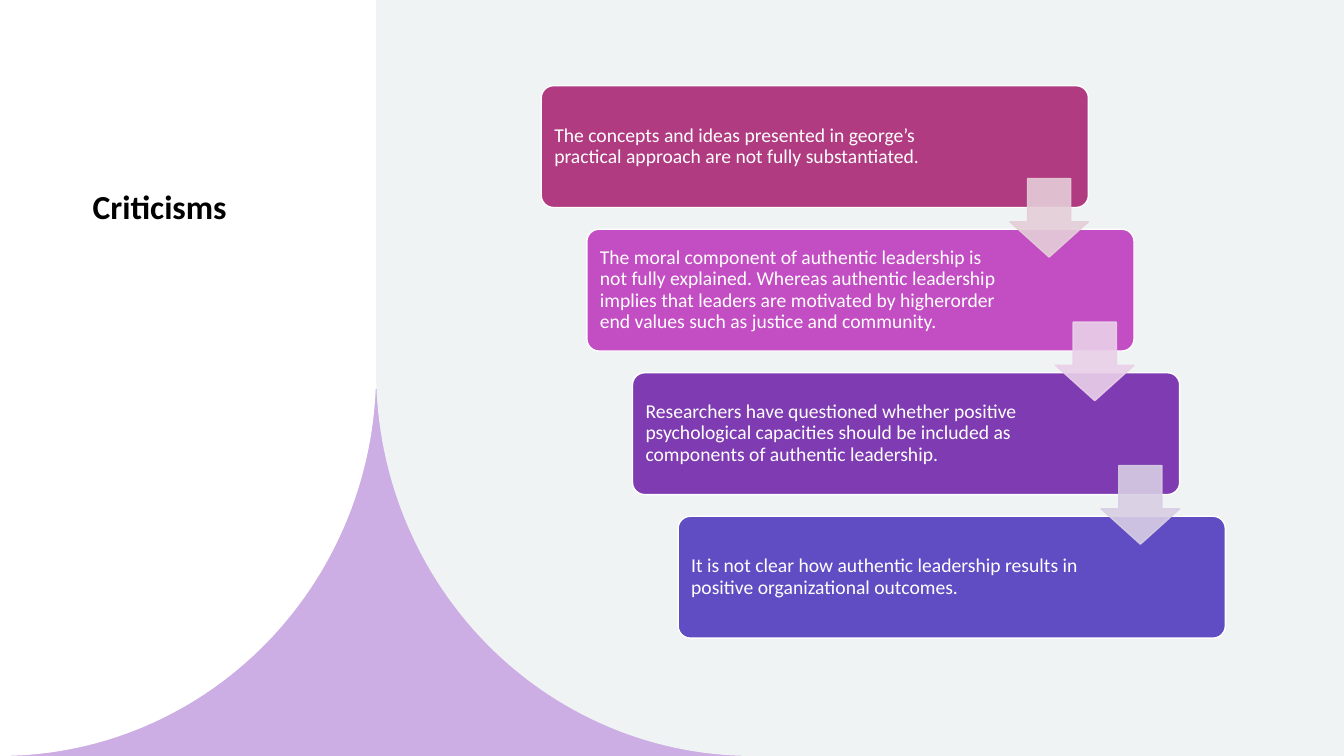
from math import cos, pi, sin

from pptx import Presentation
from pptx.dml.color import RGBColor
from pptx.enum.shapes import MSO_SHAPE
from pptx.enum.text import MSO_ANCHOR, PP_ALIGN
from pptx.oxml.ns import qn
from pptx.oxml.xmlchemy import OxmlElement
from pptx.util import Cm, Pt

RECTANGLE = MSO_SHAPE.RECTANGLE
ROUNDED = MSO_SHAPE.ROUNDED_RECTANGLE
DOWN_ARROW = MSO_SHAPE.DOWN_ARROW
TOP, MIDDLE = MSO_ANCHOR.TOP, MSO_ANCHOR.MIDDLE
LEFT = PP_ALIGN.LEFT

WHITE = RGBColor(0xFF, 0xFF, 0xFF)
BLACK = RGBColor(0x00, 0x00, 0x00)
LILAC = RGBColor(0xCC, 0xAD, 0xE4)
MIST = RGBColor(0xF0, 0xF3, 0xF3)
BOX_COLOURS = [
    RGBColor(0xB1, 0x3B, 0x81),
    RGBColor(0xC3, 0x4D, 0xC3),
    RGBColor(0x7F, 0x3B, 0xB1),
    RGBColor(0x60, 0x4D, 0xC3),
]
ARROW_COLOURS = [
    RGBColor(0xE4, 0xCE, 0xD8),
    RGBColor(0xE9, 0xD0, 0xE9),
    RGBColor(0xD8, 0xCE, 0xE4),
]

PAGE_WIDTH, PAGE_HEIGHT = 33.87, 19.05
TITLE_FONT = {"name": "Calibri", "size": Pt(24), "bold": True}
BODY_FONT = {"name": "Calibri", "size": Pt(14), "bold": False}
CRITICISMS = [
    "The concepts and ideas presented in george’s practical approach "
    "are not fully substantiated.",
    "The moral component of authentic leadership is not fully explained. "
    "Whereas authentic leadership implies that leaders are motivated by "
    "higherorder end values such as justice and community.",
    "Researchers have questioned whether positive psychological capacities "
    "should be included as components of authentic leadership.",
    "It is not clear how authentic leadership results in positive "
    "organizational outcomes.",
]


def write_text(frame, text, font, colour, spacing, anchor):
    """Put one formatted, left-aligned paragraph in a text frame."""
    frame.word_wrap = True
    frame.vertical_anchor = anchor
    para = frame.paragraphs[0]
    para.alignment = LEFT
    para.line_spacing = spacing
    span = para.add_run()
    span.text = text
    for name, value in font.items():
        setattr(span.font, name, value)
    span.font.color.rgb = colour


def paint(shape, fill, line=None):
    """Give a shape a flat fill and an optional one-point outline."""
    shape.shadow.inherit = False
    shape.fill.solid()
    shape.fill.fore_color.rgb = fill
    if line is None:
        shape.line.fill.background()
    else:
        shape.line.color.rgb = line
        shape.line.width = Pt(1)


def set_opacity(shape, percent):
    """Make the fill and outline of a shape partly transparent."""
    for colour in shape.element.spPr.iter(qn("a:srgbClr")):
        alpha = OxmlElement("a:alpha")
        alpha.set("val", str(percent * 1000))
        colour.append(alpha)


def add_curved_panel(page, box, curve_top, radius, mirrored, fill):
    """Add a panel whose inner lower corner is a quarter ellipse."""
    left, top, width, height = box
    drop = top + height - curve_top
    inner, outer, turn = left + width, left, 1
    if mirrored:
        inner, outer, turn = left, left + width, -1
    centre = inner - turn * radius
    angles = [step * pi / 120 for step in range(61)]
    arc = [(centre + turn * radius * cos(angle), curve_top + drop * sin(angle))
           for angle in angles]
    points = [(inner, top), *arc, (outer, top + height)]
    builder = page.shapes.build_freeform(Cm(outer), Cm(top))
    builder.add_line_segments([(Cm(x), Cm(y)) for x, y in points], close=True)
    paint(builder.convert_to_shape(), fill)


def add_backdrop(page, width, height):
    """Draw the lilac base and the two curved panels over it."""
    seam, curve_top = 9.48, 9.37
    base = page.shapes.add_shape(
        RECTANGLE, 0, Cm(9.8), Cm(18.72), Cm(height - 9.8))
    paint(base, LILAC)
    add_curved_panel(
        page, (0, 0, seam, height), curve_top, seam, False, WHITE)
    add_curved_panel(
        page, (seam, 0, width - seam, height), curve_top, seam, True, MIST)


def add_title(page, box, text):
    """Place the title placeholder in front of the backdrop."""
    title = page.shapes.title
    title.left, title.top, title.width, title.height = map(Cm, box)
    write_text(title.text_frame, text, TITLE_FONT, BLACK, 1.1, TOP)
    page.shapes.element.append(title.element)


def add_staircase(page, box):
    """Step the criticism boxes down the area and link them with arrows."""
    left, top, width, height = box
    box_width, box_height, arrow_size = 13.79, 3.07, 1.98
    steps = len(CRITICISMS) - 1
    step_x = (width - box_width) / steps
    step_y = (height - box_height) / steps
    insets = {"margin_left": Cm(0.24), "margin_right": Cm(3.38),
              "margin_top": Cm(0.24), "margin_bottom": Cm(0.24)}
    for index, (text, colour) in enumerate(zip(CRITICISMS, BOX_COLOURS)):
        card = page.shapes.add_shape(
            ROUNDED, Cm(left + index * step_x), Cm(top + index * step_y),
            Cm(box_width), Cm(box_height))
        card.adjustments[0] = 0.1
        paint(card, colour, WHITE)
        for name, value in insets.items():
            setattr(card.text_frame, name, value)
        write_text(card.text_frame, text, BODY_FONT, WHITE, 0.9, MIDDLE)
    for index, colour in enumerate(ARROW_COLOURS):
        arrow = page.shapes.add_shape(
            DOWN_ARROW,
            Cm(left + box_width - arrow_size + index * step_x),
            Cm(top + 2.34 + index * step_y), Cm(arrow_size), Cm(arrow_size))
        arrow.adjustments[0] = 0.45
        arrow.adjustments[1] = 0.45
        arrow.adjustments[0] = 0.55
        paint(arrow, colour, colour)
        set_opacity(arrow, 90)


def main():
    """Build the criticisms slide and save the deck."""
    deck = Presentation()
    deck.slide_width, deck.slide_height = Cm(PAGE_WIDTH), Cm(PAGE_HEIGHT)
    page = deck.slides.add_slide(deck.slide_layouts[5])
    add_backdrop(page, PAGE_WIDTH, PAGE_HEIGHT)
    add_title(page, (2.08, 4.45, 6.68, 6.93), "Criticisms")
    add_staircase(page, (13.64, 2.16, 17.24, 13.92))
    deck.save("out.pptx")


if __name__ == "__main__":
    main()
